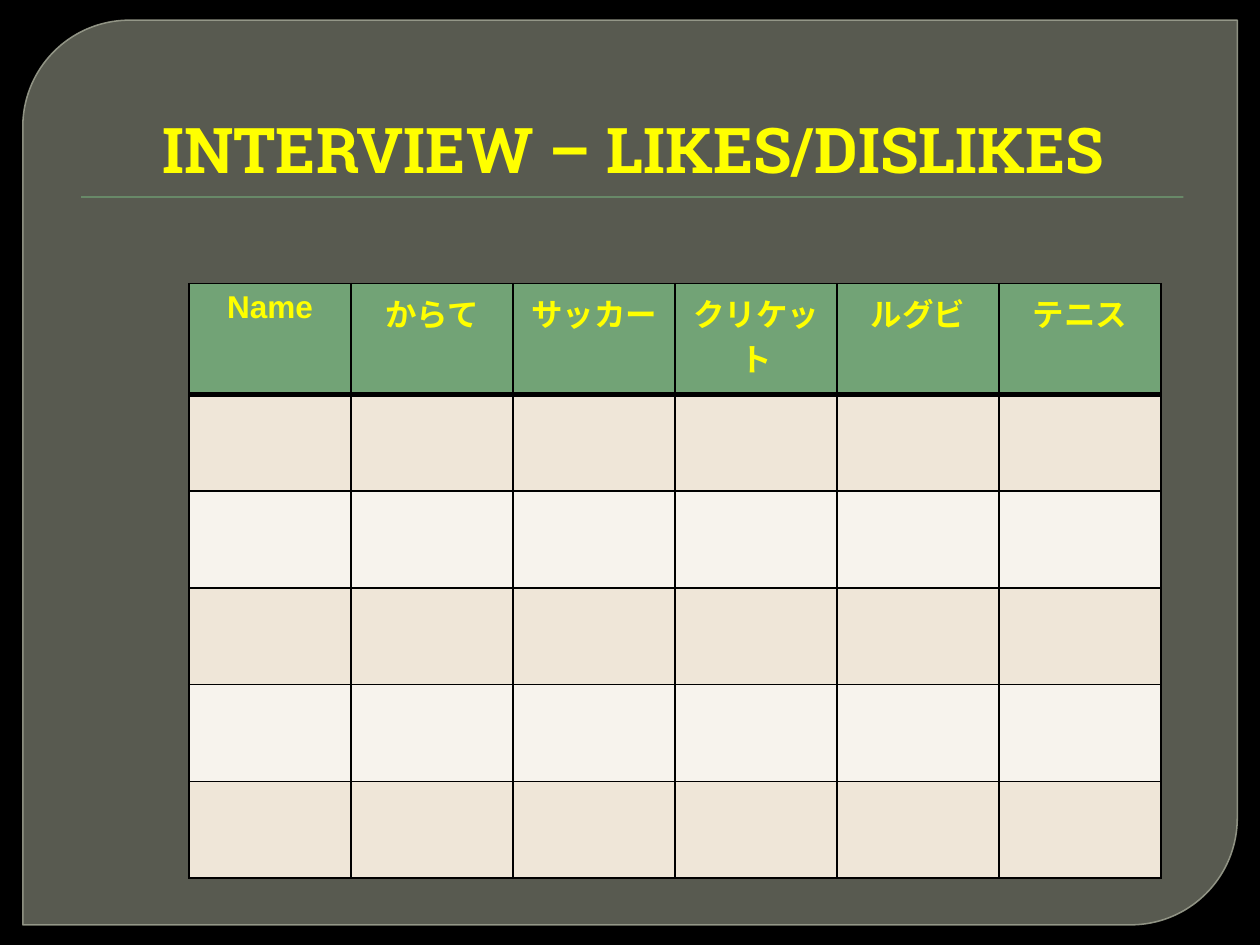
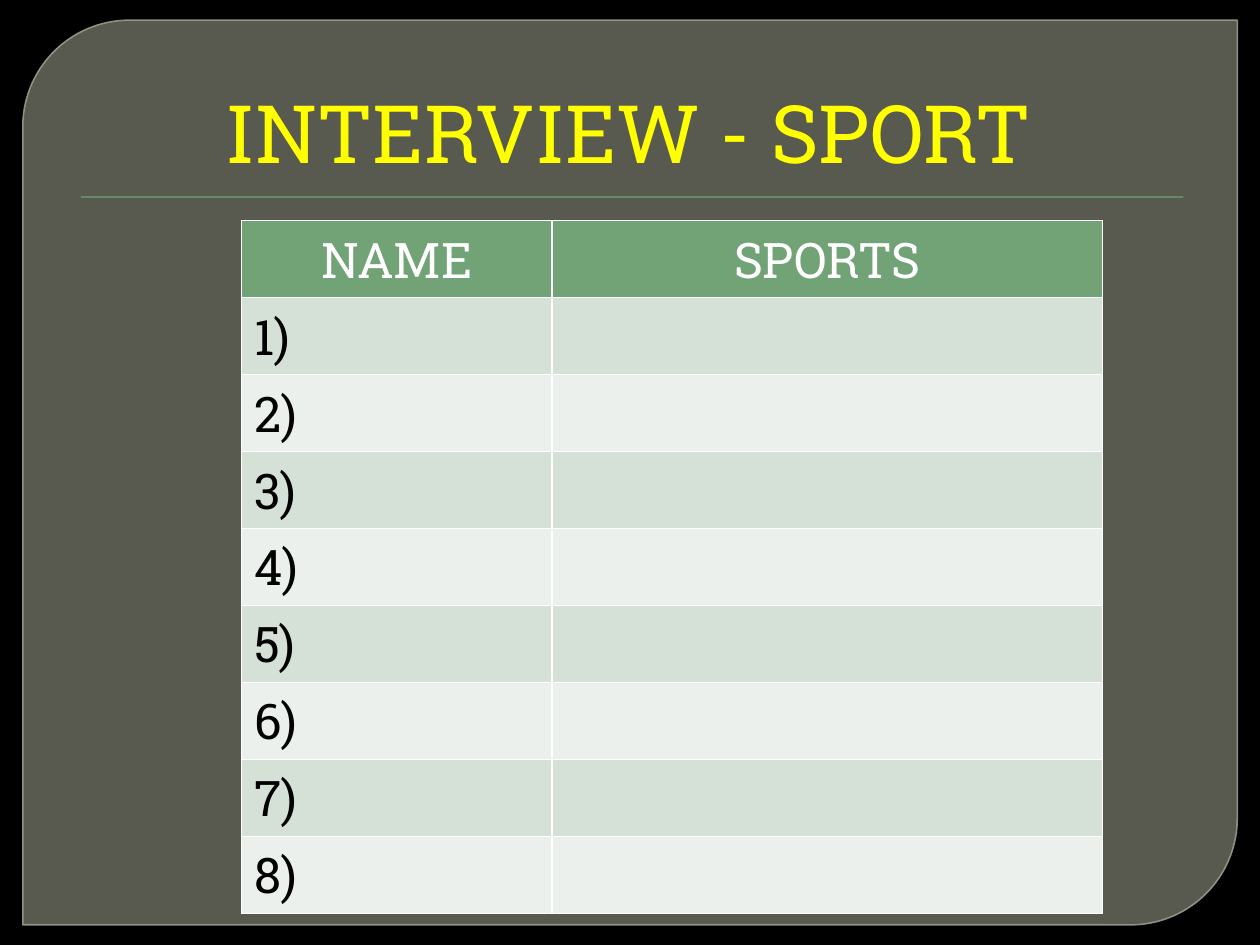
from lxml.etree import SubElement
from pptx import Presentation
from pptx.dml.color import RGBColor
from pptx.enum.shapes import MSO_SHAPE
from pptx.enum.text import MSO_ANCHOR, PP_ALIGN
from pptx.oxml.ns import qn
from pptx.util import Pt

YELLOW, GREEN, BLACK, WHITE = "FFFF00", "72A376", "000000", "FFFFFF"
SLAB = "Roboto Slab"


def rgb(value):
    return RGBColor.from_string(value)


def write(p, text, align, size, font, color, bold=False):
    p.alignment = align
    r = p.add_run()
    r.text = text
    r.font.color.rgb = rgb(color)
    for name, value in {"size": Pt(size), "name": font, "bold": bold}.items():
        setattr(r.font, name, value)


# What differs between the slides; boxes are left, top, width, height
slides = [
    {"title": "INTERVIEW – LIKES/DISLIKES", "title_box": (36, 20, 648, 90),
     "title_size": 36, "title_bold": True,
     "rows": [["Name", "からて", "サッカー", "クリケット", "ルグビ", "テニス"]]
             + [[""] * 6 for _ in range(5)],
     "at": (108, 162), "widths": [92.6] * 6, "heights": [63.4] + [55.3] * 5,
     "bands": ("EFE6D8", "F7F3ED"), "border": BLACK, "header_rule": 3,
     "header": (18, "Arial", YELLOW, True), "body": (18, "Arial", BLACK)},
    {"title": "INTERVIEW - SPORT", "title_box": (70.5, 37.5, 572.5, 68.5),
     "title_size": 46, "title_bold": False,
     "rows": [["NAME", "SPORTS"]] + [[f"{n})", ""] for n in range(1, 9)],
     "at": (138, 126), "widths": [177.5, 314.5], "heights": [44] * 9,
     "bands": ("D5E0D6", "EBF0EC"), "border": WHITE, "header_rule": 1,
     "header": (28, SLAB, WHITE), "body": (28, SLAB, BLACK)},
]

prs = Presentation()
prs.slide_width, prs.slide_height = Pt(720), Pt(540)

for d in slides:
    s = prs.slides.add_slide(prs.slide_layouts[6])
    s.background.fill.solid()
    s.background.fill.fore_color.rgb = rgb(BLACK)

    # Translucent panel with two rounded corners
    panel = s.shapes.add_shape(MSO_SHAPE.ROUND_2_DIAG_RECTANGLE,
                               Pt(13), Pt(11.5), Pt(694), Pt(517))
    panel.shadow.inherit = False
    panel.adjustments[0] = 0.118
    panel.line.width = Pt(0.87)
    for fill, color, alpha in ((panel.fill, "888B7B", 65),
                               (panel.line.fill, "9DA090", 88)):
        fill.solid()
        fill.fore_color.rgb = rgb(color)
    for clr, alpha in zip(panel.element.spPr.iter(qn("a:srgbClr")), (65, 88)):
        SubElement(clr, qn("a:alpha"), val=str(alpha * 1000))

    # Rule under the title
    rule = s.shapes.add_shape(MSO_SHAPE.RECTANGLE,
                              Pt(46.3), Pt(112.2), Pt(630), Pt(0.8))
    rule.shadow.inherit = False
    rule.fill.solid()
    rule.fill.fore_color.rgb = rgb(GREEN)
    rule.line.fill.background()

    # Title
    tf = s.shapes.add_textbox(*map(Pt, d["title_box"])).text_frame
    tf.word_wrap = True
    tf.vertical_anchor = MSO_ANCHOR.BOTTOM
    p = tf.paragraphs[0]
    write(p, d["title"], PP_ALIGN.CENTER, d["title_size"], SLAB, YELLOW,
          d["title_bold"])
    p._p.get_or_add_pPr().set("marL", str(Pt(4)))

    # Table
    widths, heights = d["widths"], d["heights"]
    table = s.shapes.add_table(len(heights), len(widths), *map(Pt, d["at"]),
                               Pt(sum(widths)), Pt(sum(heights))).table
    for column, width in zip(table.columns, widths):
        column.width = Pt(width)
    for row, height in zip(table.rows, heights):
        row.height = Pt(height)

    for i, texts in enumerate(d["rows"]):
        for j, text in enumerate(texts):
            cell = table.cell(i, j)
            # Borders go before the fill in the cell properties
            tcPr = cell._tc.get_or_add_tcPr()
            for side in "LRTB":
                heavy = (i, side) in ((0, "B"), (1, "T"))
                ln = SubElement(tcPr, qn(f"a:ln{side}"),
                                w=str(Pt(d["header_rule"] if heavy else 1)))
                SubElement(SubElement(ln, qn("a:solidFill")),
                           qn("a:srgbClr"), val=d["border"])
            cell.fill.solid()
            cell.fill.fore_color.rgb = rgb(d["bands"][(i - 1) % 2] if i else GREEN)
            if text:
                align = PP_ALIGN.LEFT if i else PP_ALIGN.CENTER
                write(cell.text_frame.paragraphs[0], text, align,
                      *d["body" if i else "header"])

prs.save("out.pptx")
